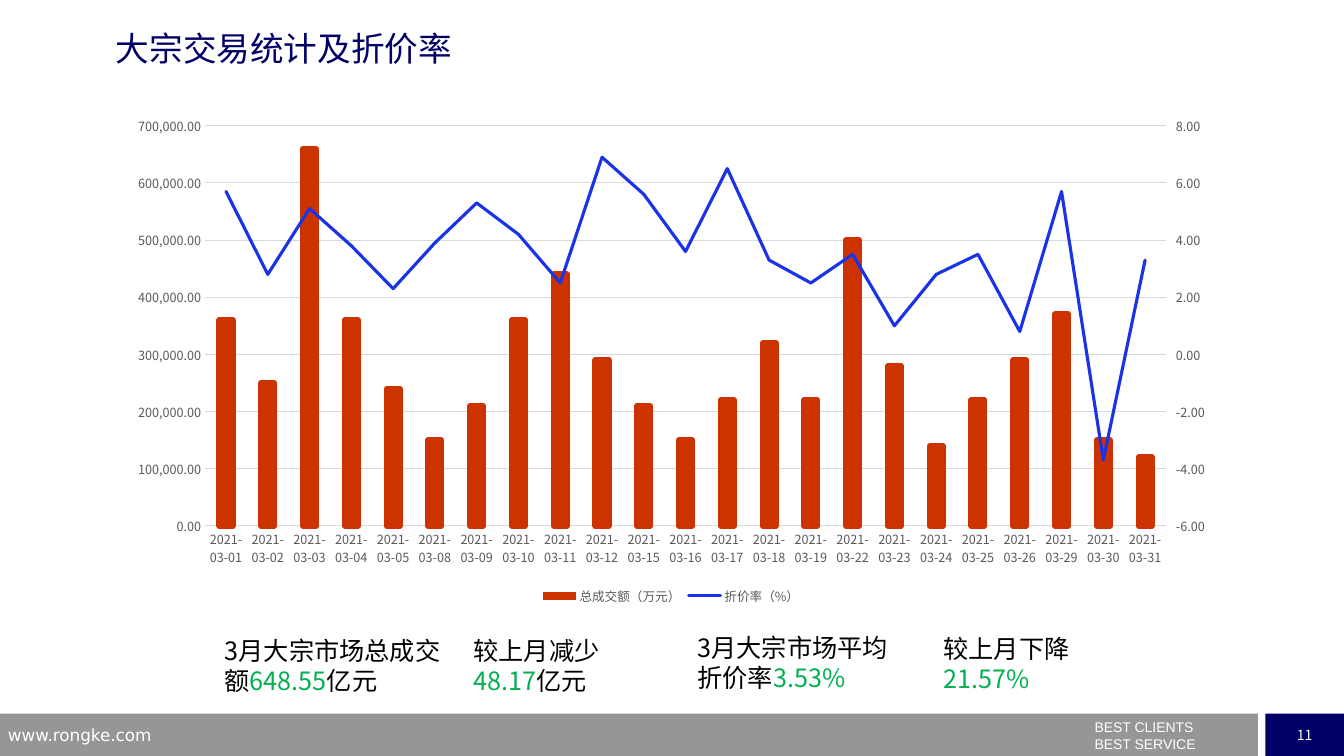
import copy
from dataclasses import dataclass
from typing import NamedTuple

import pptx
import pptx.chart.axis
import pptx.chart.data
import pptx.dml.color
import pptx.enum.chart
import pptx.enum.shapes
import pptx.enum.text
import pptx.oxml
import pptx.oxml.ns
import pptx.util

SLIDE_WIDTH = pptx.util.Inches(13.33)
SLIDE_HEIGHT = pptx.util.Inches(7.5)
CJK = "Noto Sans CJK SC"
NAVY, GREY, WHITE, BLACK = "000066", "969696", "FFFFFF", "000000"
GREEN, RED, BLUE = "00B050", "CC3300", "1B33E7"
AXIS_TEXT, GRID = "595959", "D9D9D9"

DAYS = (1, 2, 3, 4, 5, 8, 9, 10, 11, 12, 15, 16, 17, 18, 19, 22, 23, 24, 25, 26, 29, 30, 31)
TURNOVER = (360000, 250000, 660000, 360000, 240000, 150000, 210000, 360000,
            440000, 290000, 210000, 150000, 220000, 320000, 220000, 500000,
            280000, 140000, 220000, 290000, 370000, 150000, 120000)
DISCOUNT = (5.7, 2.8, 5.1, 3.8, 2.3, 3.9, 5.3, 4.2, 2.5, 6.9, 5.6, 3.6,
            6.5, 3.3, 2.5, 3.5, 1, 2.8, 3.5, 0.8, 5.7, -3.7, 3.3)


class Area(NamedTuple):
    """Left, top, width and height in percent of the slide's size."""
    left: float
    top: float
    width: float
    height: float

    def lengths(self) -> tuple[int, ...]:
        sides = (SLIDE_WIDTH, SLIDE_HEIGHT, SLIDE_WIDTH, SLIDE_HEIGHT)
        return tuple(round(side * share / 100) for side, share in zip(sides, self))


class Piece(NamedTuple):
    text: str
    colour: str | None = None


@dataclass
class Label:
    area: Area
    paragraphs: list[list[Piece]]
    size: float = 18
    colour: str = BLACK
    font: str = CJK
    insets: tuple[float, float] = (0.1, 0.05)  # side and top, in inches


LABELS = [
    Label(Area(8.63, 3.73, 67.5, 6.8), [[Piece("大宗交易统计及折价率")]],
          24, NAVY, insets=(0, 0)),
    Label(Area(15.98, 83.33, 17.85, 9.47),
          [[Piece("3月大宗市场总成交额"), Piece("648.55", GREEN), Piece("亿元")]]),
    Label(Area(34.5, 83.33, 14.4, 9.47),
          [[Piece("较上月减少")], [Piece("48.17", GREEN), Piece("亿元")]]),
    Label(Area(51.16, 82.93, 16.28, 9.47),
          [[Piece("3月大宗市场平均折价率"), Piece("3.53%", GREEN)]]),
    Label(Area(69.47, 83.07, 12.38, 9.47),
          [[Piece("较上月下降"), Piece("21.57%", GREEN)]]),
    Label(Area(80.7, 95, 19.2, 4.8),
          [[Piece("BEST CLIENTS")], [Piece("BEST SERVICE")]],
          10, WHITE, "Arial", (0.1, 0)),
    Label(Area(-0.15, 95.2, 24.15, 3.47), [[Piece("www.rongke.com")]],
          12, WHITE, "DejaVu Sans"),
]


def rgb(colour: str) -> pptx.dml.color.RGBColor:
    return pptx.dml.color.RGBColor.from_string(colour)


def set_font(font, size: float, colour: str, name: str = CJK) -> None:
    font.size = pptx.util.Pt(size)
    font.name = name
    font.color.rgb = rgb(colour)


def set_line(line, colour: str, width: float) -> None:
    line.color.rgb = rgb(colour)
    line.width = pptx.util.Pt(width)


def write_paragraph(paragraph, pieces: list[Piece], size: float, colour: str, name: str) -> None:
    for piece in pieces:
        run = paragraph.add_run()
        run.text = piece.text
        if piece.colour:
            run.font.color.rgb = rgb(piece.colour)
    set_font(paragraph.font, size, colour, name)
    defaults = paragraph._p.pPr.find(pptx.oxml.ns.qn("a:defRPr"))
    east_asian = pptx.oxml.parse_xml(f'<a:ea {pptx.oxml.ns.nsdecls("a")} typeface="{name}"/>')
    defaults.append(east_asian)


def add_label(slide, label: Label) -> None:
    frame = slide.shapes.add_textbox(*label.area.lengths()).text_frame
    frame.word_wrap = True
    side, top = (pptx.util.Inches(inset) for inset in label.insets)
    frame.margin_left = frame.margin_right = side
    frame.margin_top = frame.margin_bottom = top
    for index, pieces in enumerate(label.paragraphs):
        paragraph = frame.add_paragraph() if index else frame.paragraphs[0]
        write_paragraph(paragraph, pieces, label.size, label.colour, label.font)


def add_bar(slide, area: Area, colour: str):
    shape = slide.shapes.add_shape(pptx.enum.shapes.MSO_SHAPE.RECTANGLE, *area.lengths())
    shape.shadow.inherit = False
    shape.fill.solid()
    shape.fill.fore_color.rgb = rgb(colour)
    shape.line.fill.background()
    return shape


def add_footer(slide) -> None:
    add_bar(slide, Area(0, 94.4, 93.6, 5.6), GREY)
    frame = add_bar(slide, Area(94.15, 94.4, 5.85, 5.6), NAVY).text_frame
    frame.word_wrap = False
    frame.vertical_anchor = pptx.enum.text.MSO_ANCHOR.MIDDLE
    frame.paragraphs[0].alignment = pptx.enum.text.PP_ALIGN.CENTER
    write_paragraph(frame.paragraphs[0], [Piece("11")], 10, WHITE, CJK)


def set_value_axis(axis, low: float, high: float, step: float, number_format: str) -> None:
    axis.minimum_scale, axis.maximum_scale, axis.major_unit = low, high, step
    axis.tick_labels.number_format = number_format
    axis.tick_labels.number_format_is_linked = False


def move_to_second_axis(chart) -> pptx.chart.axis.ValueAxis:
    """Turn the last series into a line on a right-hand axis."""
    qn = pptx.oxml.ns.qn
    category, value = chart.category_axis._element, chart.value_axis._element
    bars = chart.plots[0]._element
    lines = pptx.oxml.parse_xml(
        f'<c:lineChart {pptx.oxml.ns.nsdecls("c")}><c:grouping val="standard"/>'
        '<c:varyColors val="0"/><c:marker val="1"/>'
        '<c:axId val="50010"/><c:axId val="50020"/></c:lineChart>')
    series = bars.findall(qn("c:ser"))[-1]
    for bar_setting in series.findall(qn("c:invertIfNegative")):
        series.remove(bar_setting)
    lines.insert(2, series)
    bars.addnext(lines)

    second_category, second_value = copy.deepcopy(category), copy.deepcopy(value)
    for axis, own, other in ((second_category, "50010", "50020"),
                             (second_value, "50020", "50010")):
        axis.find(qn("c:axId")).set("val", own)
        axis.find(qn("c:crossAx")).set("val", other)
    value.addnext(second_value)
    second_value.addnext(second_category)
    second_value.find(qn("c:axPos")).set("val", "r")
    second_value.find(qn("c:crosses")).set("val", "max")
    pptx.chart.axis.CategoryAxis(second_category).visible = False
    return pptx.chart.axis.ValueAxis(second_value)


def add_trading_chart(slide) -> None:
    data = pptx.chart.data.CategoryChartData()
    data.categories = [f"2021-03-{day:02}" for day in DAYS]
    data.add_series("总成交额（万元）", TURNOVER)
    data.add_series("折价率（%）", DISCOUNT)
    chart = slide.shapes.add_chart(
        pptx.enum.chart.XL_CHART_TYPE.COLUMN_CLUSTERED,
        *Area(8.63, 14.13, 82.67, 66.4).lengths(), data).chart
    set_font(chart.font, 10, BLACK)
    chart.has_title = False
    chart.has_legend = True
    chart.legend.position = pptx.enum.chart.XL_LEGEND_POSITION.BOTTOM
    chart.legend.include_in_layout = False
    set_font(chart.legend.font, 9, AXIS_TEXT)

    left_axis = chart.value_axis
    for axis in (chart.category_axis, left_axis):
        axis.major_tick_mark = pptx.enum.chart.XL_TICK_MARK.NONE
        set_font(axis.tick_labels.font, 9, AXIS_TEXT)
    set_line(chart.category_axis.format.line, GRID, 0.75)
    left_axis.format.line.fill.background()
    right_axis = move_to_second_axis(chart)
    right_axis.has_major_gridlines = False
    right_axis.major_tick_mark = pptx.enum.chart.XL_TICK_MARK.OUTSIDE
    set_line(left_axis.major_gridlines.format.line, GRID, 0.75)
    set_value_axis(left_axis, 0, 700000, 100000, "#,##0.00")
    set_value_axis(right_axis, -6, 8, 2, "0.00")

    bar_plot, line_plot = chart.plots
    bar_plot.gap_width = 219
    bar_plot.vary_by_categories = False
    turnover, discount = bar_plot.series[0], line_plot.series[0]
    turnover.format.fill.solid()
    turnover.format.fill.fore_color.rgb = rgb(RED)
    discount.smooth = False
    discount.marker.style = pptx.enum.chart.XL_MARKER_STYLE.NONE
    for series, colour, width in ((turnover, RED, 4.25), (discount, BLUE, 2.25)):
        set_line(series.format.line, colour, width)
        outline = series.format.line._get_or_add_ln()
        outline.set("cap", "rnd")
        outline.append(pptx.oxml.parse_xml(f'<a:round {pptx.oxml.ns.nsdecls("a")}/>'))


def main() -> None:
    presentation = pptx.Presentation()
    presentation.slide_width, presentation.slide_height = SLIDE_WIDTH, SLIDE_HEIGHT
    slide = presentation.slides.add_slide(presentation.slide_layouts[6])
    add_footer(slide)
    add_trading_chart(slide)
    for label in LABELS:
        add_label(slide, label)
    presentation.save("out.pptx")


if __name__ == "__main__":
    main()
